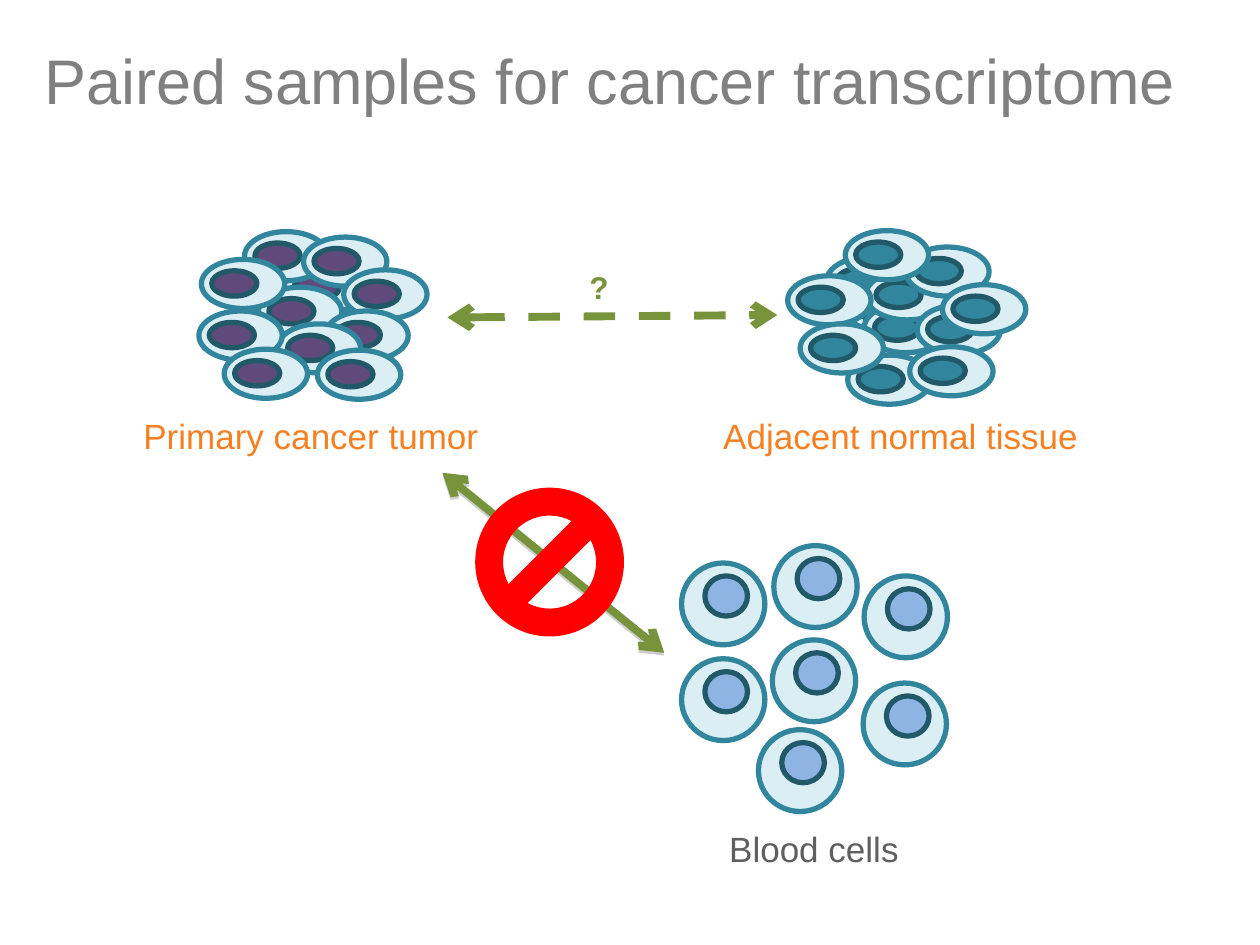
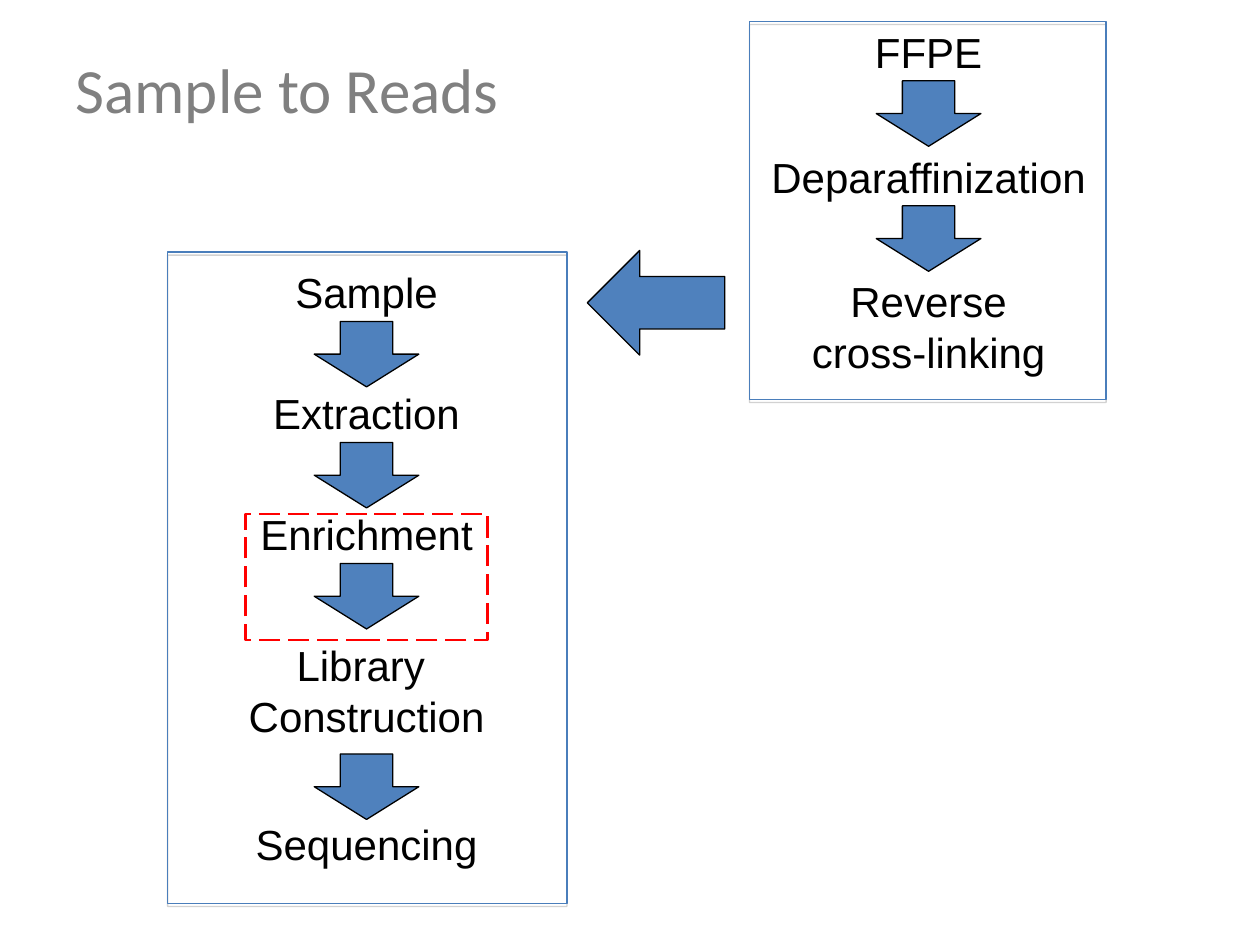
from lxml import etree
from pptx import Presentation
from pptx.dml.color import RGBColor
from pptx.enum.dml import MSO_LINE
from pptx.enum.shapes import MSO_CONNECTOR, MSO_SHAPE
from pptx.enum.text import MSO_ANCHOR, MSO_AUTO_SIZE, PP_ALIGN
from pptx.oxml.ns import qn
from pptx.util import Cm, Pt

ELLIPSE = MSO_SHAPE.OVAL
RECTANGLE = MSO_SHAPE.RECTANGLE
DOWN_ARROW = MSO_SHAPE.DOWN_ARROW
NO_SYMBOL = MSO_SHAPE.NO_SYMBOL
STRAIGHT = MSO_CONNECTOR.STRAIGHT
DASH = MSO_LINE.DASH
LONG_DASH = MSO_LINE.LONG_DASH
MIDDLE = MSO_ANCHOR.MIDDLE
FIT_SHAPE = MSO_AUTO_SIZE.SHAPE_TO_FIT_TEXT
NO_FIT = MSO_AUTO_SIZE.NONE
LEFT = PP_ALIGN.LEFT
CENTER = PP_ALIGN.CENTER
TITLE_ONLY = 5

GREY = "808080"
ORANGE = "F58023"
SLATE = "5F5E62"
GREEN = "77933C"
RED = "FF0000"
BLACK = "000000"
STEP_BLUE = "4F81BD"
FRAME_BLUE = "4A7EBB"
CELL_FILL = "DBEEF4"
TEAL = "31859C"
DARK_TEAL = "215968"
PURPLE = "604A7B"
LIGHT_BLUE = "8EB4E3"

TISSUE_CELL = ((1.68, 0.99), (0.21, 0.23), (0.91, 0.51))
BLOOD_CELL = ((1.68, 1.65), (0.47, 0.26), (0.86, 0.81))

NORMAL_CELLS = [
    (16.66, 5.18), (16.99, 5.69), (17.42, 6.12), (17.45, 5.46),
    (18.26, 4.98), (15.88, 5.56), (17.09, 7.16), (18.49, 6.15),
    (18.34, 6.99), (17.04, 4.65), (19, 5.74), (16.13, 6.53),
]
TUMOR_CELLS = [
    (5.72, 5.31), (4.93, 4.67), (6.12, 4.78), (5.21, 5.79),
    (6.93, 5.44), (6.55, 6.27), (5.59, 6.53), (4.06, 5.23),
    (4.01, 6.27), (4.52, 7.04), (6.4, 7.06),
]
BLOOD_CELLS = [
    (13.74, 11.35), (15.6, 11), (17.42, 11.61), (13.74, 13.28),
    (15.57, 12.9), (15.29, 14.71), (17.4, 13.77),
]

ARROW_WIDTH = 2.11
ARROW_HEIGHT = 1.32
LINE_STEP = 1.2
SAMPLE_STEPS = [
    ("Sample", 5.28), ("Extraction", 7.72), ("Enrichment", 10.16),
    ("Library \nConstruction", 12.8), ("Sequencing", 16.41),
]
FFPE_STEPS = [
    ("FFPE", 0.43), ("Deparaffinization", 2.95),
    ("Reverse\ncross-linking", 5.46),
]


def color(value):
    return RGBColor.from_string(value)


def format_text(frame, size, value, font="Arial", align=LEFT, bold=False):
    for paragraph in frame.paragraphs:
        paragraph.alignment = align
        for span in paragraph.runs:
            span.font.name = font
            span.font.size = Pt(size)
            span.font.bold = bold
            span.font.color.rgb = color(value)


def add_page(deck, title, left, top, width, font):
    page = deck.slides.add_slide(deck.slide_layouts[TITLE_ONLY])
    box = page.shapes.title
    box.left, box.top = Cm(left), Cm(top)
    box.width, box.height = Cm(width), Cm(3.18)
    frame = box.text_frame
    frame.text = title
    frame.auto_size = NO_FIT
    frame.vertical_anchor = MIDDLE
    format_text(frame, 36, GREY, font)
    return page


def add_shape(shapes, kind, left, top, width, height,
              fill=None, line=None, weight=0.75):
    shape = shapes.add_shape(kind, Cm(left), Cm(top), Cm(width), Cm(height))
    shape.shadow.inherit = False
    if fill:
        shape.fill.solid()
        shape.fill.fore_color.rgb = color(fill)
    else:
        shape.fill.background()
    if line:
        shape.line.color.rgb = color(line)
        shape.line.width = Pt(weight)
    else:
        shape.line.fill.background()
    return shape


def cast_shadow(effects, distance, opacity):
    shadow = etree.SubElement(
        effects, qn("a:outerShdw"), blurRad="0", dist=str(Pt(distance)),
        dir="5400000", rotWithShape="0")
    tint = etree.SubElement(shadow, qn("a:srgbClr"), val=GREY)
    etree.SubElement(tint, qn("a:alpha"), val=str(opacity * 1000))


def add_label(shapes, text, left, top, width, value, size=20, bold=False):
    box = shapes.add_textbox(Cm(left), Cm(top), Cm(width), Cm(1.12))
    frame = box.text_frame
    frame.text = text
    frame.word_wrap = False
    frame.auto_size = FIT_SHAPE
    format_text(frame, size, value, bold=bold)


def add_cells(page, places, measures, nucleus_fill):
    cell_size, (shift_x, shift_y), nucleus_size = measures
    cluster = page.shapes.add_group_shape().shapes
    for left, top in places:
        add_shape(cluster, ELLIPSE, left, top, *cell_size,
                  CELL_FILL, TEAL, 3)
        add_shape(cluster, ELLIPSE, left + shift_x, top + shift_y,
                  *nucleus_size, nucleus_fill, DARK_TEAL, 3)


def add_double_arrow(page, start, end, dash=None, shadow=None):
    points = [Cm(value) for value in (*start, *end)]
    arrow = page.shapes.add_connector(STRAIGHT, *points)
    arrow.line.color.rgb = color(GREEN)
    arrow.line.width = Pt(4.5)
    if dash:
        arrow.line.dash_style = dash
    outline = arrow.line._get_or_add_ln()
    for tip in ("a:headEnd", "a:tailEnd"):
        etree.SubElement(outline, qn(tip), type="arrow")
    effects = etree.SubElement(arrow._element.spPr, qn("a:effectLst"))
    if shadow:
        cast_shadow(effects, *shadow)


def add_step_label(page, text, center, top, width):
    line_count = text.count("\n") + 1
    box = page.shapes.add_textbox(Cm(center - width / 2), Cm(top), Cm(width),
                                  Cm(0.2 + 1.04 * line_count))
    frame = box.text_frame
    frame.text = text
    frame.word_wrap = True
    frame.auto_size = FIT_SHAPE
    frame.margin_left = frame.margin_right = Cm(0.23)
    frame.margin_top = frame.margin_bottom = Cm(0.1)
    format_text(frame, 24, BLACK, align=CENTER)


def add_step_arrow(page, left, top, height=ARROW_HEIGHT):
    return add_shape(page.shapes, DOWN_ARROW, left, top, ARROW_WIDTH, height,
                     STEP_BLUE, BLACK)


def add_flow(page, steps, center, width):
    for text, top in steps:
        add_step_label(page, text, center, top, width)
    for text, top in steps[:-1]:
        line_count = text.count("\n") + 1
        add_step_arrow(page, center - ARROW_WIDTH / 2,
                       top + LINE_STEP * line_count)


def add_frame(page, left, top, width, height):
    frame = add_shape(page.shapes, RECTANGLE, left, top, width, height,
                      line=FRAME_BLUE)
    cast_shadow(frame._element.spPr.find(qn("a:effectLst")), 1.8, 35)


def build_paired_samples(deck):
    page = add_page(deck, "Paired samples for cancer transcriptome",
                    0.64, 0, 23.5, "Arial")
    add_cells(page, NORMAL_CELLS, TISSUE_CELL, TEAL)
    add_cells(page, TUMOR_CELLS, TISSUE_CELL, PURPLE)
    add_label(page.shapes, "Primary cancer tumor", 2.64, 8.23, 7.32, ORANGE)
    add_label(page.shapes, "Adjacent normal tissue", 14.33, 8.23, 7.92, ORANGE)
    add_double_arrow(page, (9.02, 6.4), (15.67, 6.35), dash=DASH)
    add_cells(page, BLOOD_CELLS, BLOOD_CELL, LIGHT_BLUE)
    add_label(page.shapes, "Blood cells", 14.45, 16.56, 3.96, SLATE)
    add_double_arrow(page, (8.92, 9.53), (13.39, 13.16), shadow=(1.6, 38))
    ban = add_shape(page.shapes, NO_SYMBOL, 9.58, 9.83, 3, 3, RED)
    ban.rotation = 270
    add_label(page.shapes, "?", 11.63, 5.28, 0.91, GREEN, 18, True)


def build_sample_to_reads(deck):
    page = add_page(deck, "Sample to Reads", 1.27, 0.2, 22.86, "Calibri")
    add_flow(page, SAMPLE_STEPS, 7.39, 5.94)
    add_flow(page, FFPE_STEPS, 18.72, 7.37)
    link = add_step_arrow(page, 12.17, 4.72, 2.77)
    link.rotation = 90
    focus = add_shape(page.shapes, RECTANGLE, 4.95, 10.36, 4.88, 2.54,
                      line=RED, weight=1.5)
    focus.line.dash_style = LONG_DASH
    add_frame(page, 3.38, 5.08, 8.05, 13.13)
    add_frame(page, 15.11, 0.43, 7.19, 7.62)


def main():
    deck = Presentation()
    deck.slide_width, deck.slide_height = Cm(25.4), Cm(19.05)
    build_paired_samples(deck)
    build_sample_to_reads(deck)
    deck.save("out.pptx")


if __name__ == "__main__":
    main()
